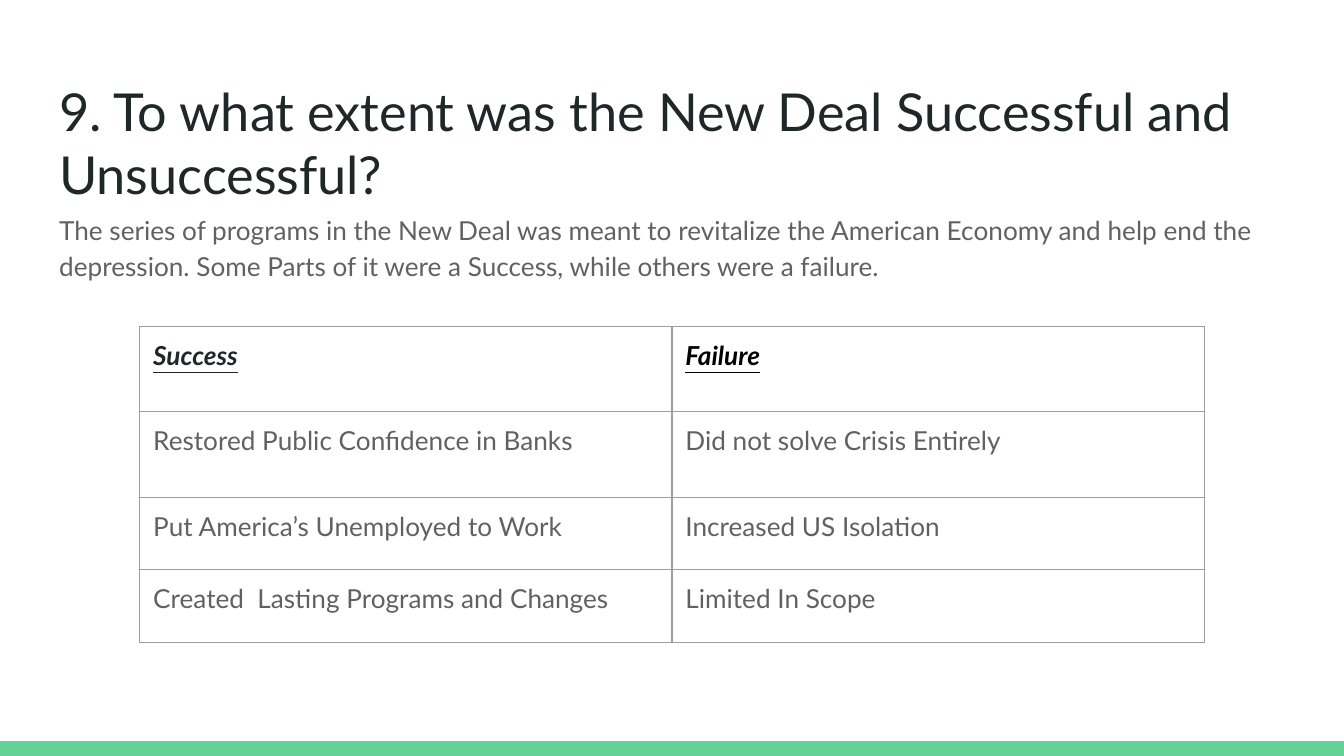
from lxml import etree
from pptx import Presentation
from pptx import util as u
from pptx.dml.color import RGBColor
from pptx.enum import shapes, text
from pptx.oxml.ns import qn

COLORS = {
    "ink": "202729",
    "body": "616161",
    "black": "000000",
    "accent": "63D297",
    "rule": "9E9E9E",
}
WIDTH = u.Inches(10)
HEIGHT = WIDTH * 9 // 16
INSET = u.Inches(0.1)
BAND_HEIGHT = u.Inches(0.11)
ROW_HEIGHTS = [0.63, 0.64, 0.54, 0.54]
OUTCOMES = [
    ("Success", "Failure"),
    ("Restored Public Confidence in Banks", "Did not solve Crisis Entirely"),
    ("Put America’s Unemployed to Work", "Increased US Isolation"),
    ("Created  Lasting Programs and Changes", "Limited In Scope"),
]
MARGINS = {f"margin_{side}": INSET for side in ("left", "top", "right", "bottom")}
FRAME = {
    **MARGINS,
    "word_wrap": True,
    "auto_size": text.MSO_AUTO_SIZE.NONE,
    "vertical_anchor": text.MSO_ANCHOR.TOP,
}
PARAGRAPH = {
    "alignment": text.PP_ALIGN.LEFT,
    "line_spacing": 1.0,
    "space_before": u.Pt(0),
    "space_after": u.Pt(0),
}
HEADING = {"bold": True, "italic": True, "underline": True}


def apply(target, formats):
    for name, value in formats.items():
        setattr(target, name, value)


def inch_box(*lengths):
    return [u.Inches(length) for length in lengths]


def write(frame, words, color, size, font=None, paragraph=None):
    frame.text = words
    line = frame.paragraphs[0]
    apply(line, {**PARAGRAPH, **(paragraph or {})})
    run = line.runs[0]
    apply(run.font, {"name": "Lato", "size": u.Pt(size), **(font or {})})
    run.font.color.rgb = RGBColor.from_string(COLORS[color])
    return line


def place(placeholder, box):
    apply(placeholder, dict(zip(("left", "top", "width", "height"), box)))
    apply(placeholder.text_frame, FRAME)


def add_footer_band(slide, box):
    band = slide.shapes.add_shape(shapes.MSO_SHAPE.RECTANGLE, *box)
    band.shadow.inherit = False
    band.fill.solid()
    band.fill.fore_color.rgb = RGBColor.from_string(COLORS["accent"])
    band.line.fill.background()


def fill_question(question, box):
    place(question, box)
    write(
        question.text_frame,
        "9. To what extent was the New Deal Successful and Unsuccessful?",
        "ink",
        28,
    )


def fill_summary(summary, box):
    place(summary, box)
    line = write(
        summary.text_frame,
        "The series of programs in the New Deal was meant to revitalize the American "
        "Economy and help end the  depression. Some Parts of it were a Success, "
        "while others were a failure.",
        "body",
        14,
        paragraph={"line_spacing": 1.15, "space_after": u.Pt(16)},
    )
    properties = line._p.get_or_add_pPr()
    properties.set("marL", "0")
    properties.set("indent", "0")
    etree.SubElement(properties, qn("a:buNone"))


def outline_cell(cell):
    properties = cell._tc.get_or_add_tcPr()
    for position, side in enumerate(("lnL", "lnR", "lnT", "lnB")):
        edge = etree.Element(qn(f"a:{side}"), w=str(u.Pt(0.75)))
        solid = etree.SubElement(edge, qn("a:solidFill"))
        etree.SubElement(solid, qn("a:srgbClr"), val=COLORS["rule"])
        properties.insert(position, edge)


def add_outcomes(slide, box):
    outcomes = slide.shapes.add_table(len(OUTCOMES), len(OUTCOMES[0]), *box).table
    apply(outcomes, {"first_row": False, "horz_banding": False})
    for row, height in zip(outcomes.rows, ROW_HEIGHTS):
        row.height = round(box[3] * height / sum(ROW_HEIGHTS))
    for row_index, pair in enumerate(OUTCOMES):
        for column_index, words in enumerate(pair):
            cell = outcomes.cell(row_index, column_index)
            apply(cell, {**MARGINS, "vertical_anchor": text.MSO_ANCHOR.TOP})
            cell.fill.background()
            outline_cell(cell)
            if row_index == 0:
                write(cell.text_frame, words, ("ink", "black")[column_index], 14, HEADING)
            else:
                write(cell.text_frame, words, "body", 14)


def build_outcome_slide(deck):
    slide = deck.slides.add_slide(deck.slide_layouts[1])
    question, summary = slide.placeholders
    add_footer_band(slide, [0, HEIGHT - BAND_HEIGHT, WIDTH, BAND_HEIGHT])
    fill_question(question, inch_box(0.34, 0.49, 9.32, 0.63))
    fill_summary(summary, inch_box(0.34, 1.46, 9.32, 3.59))
    add_outcomes(slide, inch_box(1.04, 2.43, 7.92, sum(ROW_HEIGHTS)))


def main():
    deck = Presentation()
    apply(deck, {"slide_width": WIDTH, "slide_height": HEIGHT})
    build_outcome_slide(deck)
    deck.save("out.pptx")


if __name__ == "__main__":
    main()
